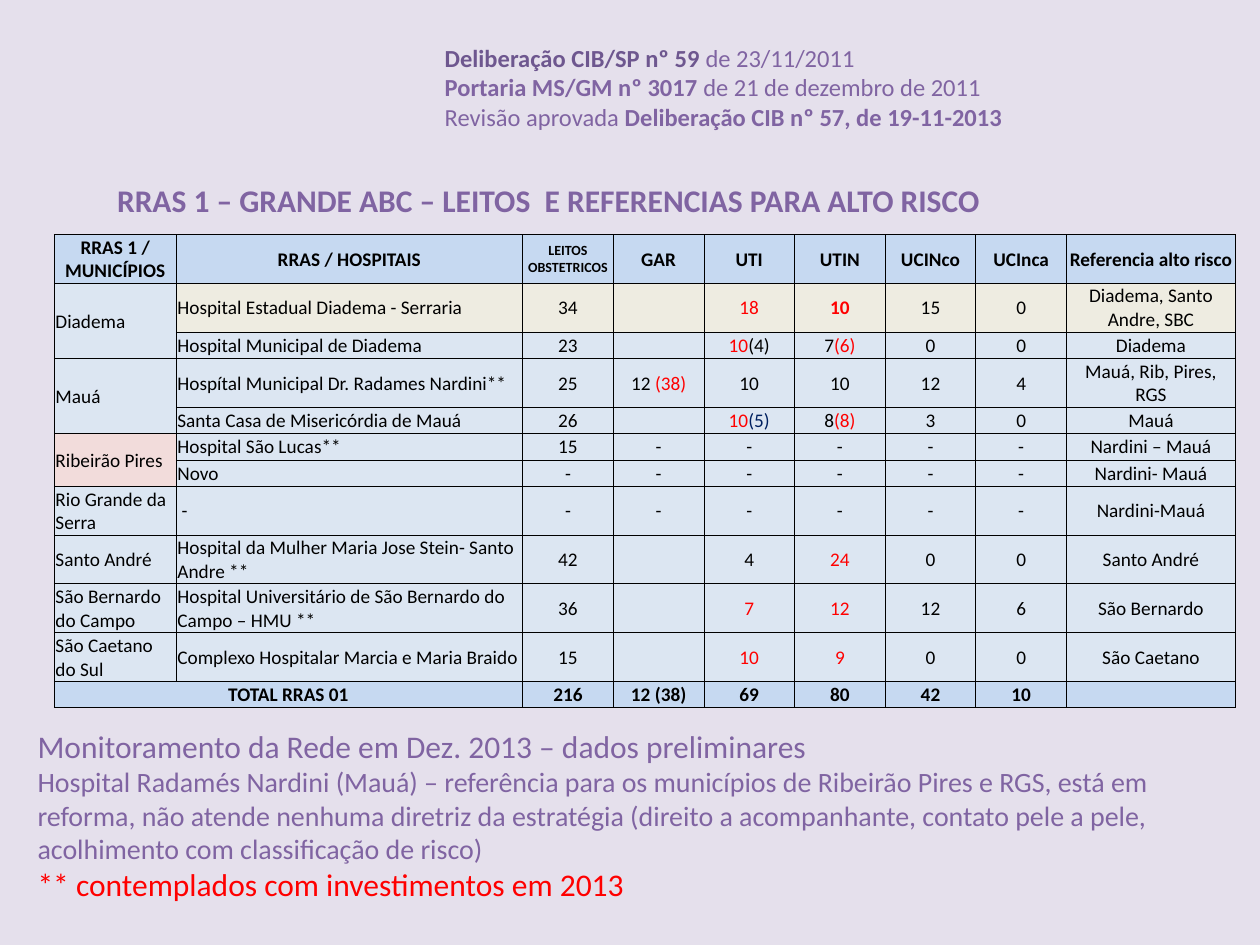
from dataclasses import dataclass

from lxml import etree
from pptx import Presentation
from pptx.dml.color import RGBColor
from pptx.enum.text import MSO_ANCHOR, MSO_AUTO_SIZE, PP_ALIGN
from pptx.oxml.ns import qn
from pptx.util import Pt

LEFT, CENTER = PP_ALIGN.LEFT, PP_ALIGN.CENTER
MIDDLE = MSO_ANCHOR.MIDDLE
GROW = MSO_AUTO_SIZE.SHAPE_TO_FIT_TEXT


@dataclass(frozen=True)
class Theme:
    """Colours, font and type sizes of the slide."""
    font: str = "Calibri"
    background: str = "E5E0EC"
    purple: str = "8064A2"
    deep_purple: str = "6E578F"
    red: str = "FF0000"
    navy: str = "002060"
    black: str = "000000"
    band: str = "C6D9F1"
    body: str = "DCE6F2"
    beige: str = "EEECE1"
    pink: str = "F2DCDB"
    heading: int = 18
    note: int = 16
    decree: int = 14
    cell: int = 11
    small: int = 8


THEME = Theme()


@dataclass(frozen=True)
class Span:
    """A stretch of text that differs from its paragraph."""
    text: str
    color: str = None
    bold: bool = None


def red(text, bold=None):
    """Return a red span."""
    return Span(text, THEME.red, bold)


COLUMN_WIDTHS = [69.7, 198] + [51.8] * 6 + [96.6]
TALL_ROW, SHORT_ROW = 27.1, 15.1
TALL_ROWS = {0, 1, 3, 7, 8, 9, 10}
CITY_SPANS = (1, 3, 5)
BEIGE_ROW, PINK_ROW = 1, 5
HEADERS = ["RRAS 1 / MUNICÍPIOS", "RRAS / HOSPITAIS", "LEITOS\nOBSTETRICOS", "GAR", "UTI",
           "UTIN", "UCINco", "UCInca", "Referencia alto risco"]
DASHES = ["-"] * 6
HOSPITALS = [
    ["Diadema", "Hospital Estadual Diadema - Serraria", "34", "", [red("18")],
     [red("10", True)], "15", "0", "Diadema, Santo Andre, SBC"],
    ["", "Hospital Municipal de Diadema", "23", "", [red("10"), "(4)"], ["7", red("(6)")],
     "0", "0", "Diadema"],
    ["Mauá", "Hospítal Municipal Dr. Radames Nardini**", "25", ["12 ", red("(38)")], "10",
     "10", "12", "4", "Mauá, Rib, Pires, RGS"],
    ["", "Santa Casa de Misericórdia de Mauá", "26", "", [red("10"), Span("(5)", THEME.navy)],
     ["8", red("(8)")], "3", "0", "Mauá"],
    ["Ribeirão Pires", "Hospital São Lucas**", "15", *DASHES[1:], "Nardini – Mauá"],
    ["", "Novo", *DASHES, "Nardini- Mauá"],
    ["Rio Grande da Serra", " -", *DASHES, "Nardini-Mauá"],
    ["Santo André", "Hospital da Mulher Maria Jose Stein- Santo Andre **", "42", "", "4",
     [red("24")], "0", "0", "Santo André"],
    ["São Bernardo do Campo", "Hospital Universitário de São Bernardo do Campo – HMU **",
     "36", "", [red("7")], [red("12")], "12", "6", "São Bernardo"],
    ["São Caetano do Sul", "Complexo Hospitalar Marcia e Maria Braido", "15", "",
     [red("10")], [red("9")], "0", "0", "São Caetano"],
]
TOTALS = ["TOTAL RRAS 01", "", "216", "12 (38)", "69", "80", "42", "10", ""]


def write(paragraph, content, size, color, bold=False, align=LEFT):
    """Fill a paragraph with a string or a list of strings and spans."""
    paragraph.alignment = align
    font = paragraph.font
    font.name, font.size, font.bold = THEME.font, Pt(size), bold
    font.color.rgb = RGBColor.from_string(color)
    if not content:
        paragraph._p.get_or_add_endParaRPr().set("sz", str(size * 100))
        return
    for part in [content] if isinstance(content, str) else content:
        span = Span(part) if isinstance(part, str) else part
        run = paragraph.add_run()
        run.text = span.text
        if span.color:
            run.font.color.rgb = RGBColor.from_string(span.color)
        if span.bold is not None:
            run.font.bold = span.bold


def add_text(slide, box, lines, wrap=True):
    """Place a text box whose lines are (content, size, color, bold)."""
    frame = slide.shapes.add_textbox(*map(Pt, box)).text_frame
    frame.word_wrap = wrap
    frame.auto_size = GROW
    for index, line in enumerate(lines):
        paragraph = frame.add_paragraph() if index else frame.paragraphs[0]
        write(paragraph, *line)


def add_borders(cell):
    """Draw thin black lines on all sides of a cell."""
    properties = cell._tc.get_or_add_tcPr()
    for side in ("a:lnL", "a:lnR", "a:lnT", "a:lnB"):
        line = etree.SubElement(properties, qn(side), w=str(Pt(0.5)))
        fill = etree.SubElement(line, qn("a:solidFill"))
        etree.SubElement(fill, qn("a:srgbClr"), val=THEME.black)


def fill_color(row, column, last_row):
    """Return the background colour of a table cell."""
    if row in (0, last_row):
        return THEME.band
    if row == BEIGE_ROW and column:
        return THEME.beige
    if row in (PINK_ROW, PINK_ROW + 1) and not column:
        return THEME.pink
    return THEME.body


def add_beds_table(slide, left, top):
    """Place the table of beds and references by hospital."""
    rows = [HEADERS, *HOSPITALS, TOTALS]
    last_row = len(rows) - 1
    heights = [TALL_ROW if row in TALL_ROWS else SHORT_ROW for row in range(len(rows))]
    table = slide.shapes.add_table(
        len(rows), len(HEADERS), Pt(left), Pt(top),
        Pt(sum(COLUMN_WIDTHS)), Pt(sum(heights))).table
    table.first_row = table.horz_banding = False
    for column, width in zip(table.columns, COLUMN_WIDTHS):
        column.width = Pt(width)
    for row, (values, height) in enumerate(zip(rows, heights)):
        table.rows[row].height = Pt(height)
        edge = row in (0, last_row)
        for column, value in enumerate(values):
            cell = table.cell(row, column)
            cell.margin_left = cell.margin_right = cell.margin_top = Pt(0.7)
            cell.margin_bottom = 0
            cell.vertical_anchor = MIDDLE
            add_borders(cell)
            cell.fill.solid()
            cell.fill.fore_color.rgb = RGBColor.from_string(fill_color(row, column, last_row))
            lines = value.split("\n") if isinstance(value, str) else [value]
            size = THEME.small if len(lines) > 1 else THEME.cell
            align = CENTER if edge or column > 1 else LEFT
            for index, line in enumerate(lines):
                paragraph = (cell.text_frame.add_paragraph() if index
                             else cell.text_frame.paragraphs[0])
                write(paragraph, line, size, THEME.black, edge, align)
    for row in CITY_SPANS:
        table.cell(row, 0).merge(table.cell(row + 1, 0))
    table.cell(last_row, 0).merge(table.cell(last_row, 1))


def add_decrees(slide, box):
    """Place the list of decrees at the top."""
    style = (THEME.decree, THEME.purple)
    add_text(slide, box, [
        ([Span("Deliberação CIB/SP nº 59 ", THEME.deep_purple, True), "de 23/11/2011"], *style),
        ([Span("Portaria MS/GM nº 3017 ", bold=True), "de 21 de dezembro de 2011"], *style),
        (["Revisão aprovada ", Span("Deliberação CIB nº 57, de 19-11-2013", bold=True)], *style),
    ])


def add_title(slide, box):
    """Place the table title."""
    title = "RRAS 1 – GRANDE ABC – LEITOS  E REFERENCIAS PARA ALTO RISCO"
    add_text(slide, box, [(title, THEME.heading, THEME.purple, True)], wrap=False)


def add_notes(slide, box):
    """Place the remarks under the table."""
    add_text(slide, box, [
        ("Monitoramento da Rede em Dez. 2013 – dados preliminares", THEME.heading, THEME.purple),
        ("Hospital Radamés Nardini (Mauá) – referência para os municípios de Ribeirão Pires e "
         "RGS, está em reforma, não atende nenhuma diretriz da estratégia (direito a "
         "acompanhante, contato pele a pele, acolhimento com classificação de risco)",
         THEME.note, THEME.purple),
        ("** contemplados com investimentos em 2013", THEME.heading, THEME.red),
    ])


def main():
    """Build and save the slide."""
    deck = Presentation()
    deck.slide_width, deck.slide_height = Pt(720), Pt(540)
    slide = deck.slides.add_slide(deck.slide_layouts[6])
    slide.background.fill.solid()
    slide.background.fill.fore_color.rgb = RGBColor.from_string(THEME.background)
    add_beds_table(slide, 31, 134)
    add_title(slide, (59.8, 100, 512.6, 29))
    add_notes(slide, (14.4, 411.8, 692, 131))
    add_decrees(slide, (247, 20.9, 459.4, 58.3))
    deck.save("out.pptx")


if __name__ == "__main__":
    main()
